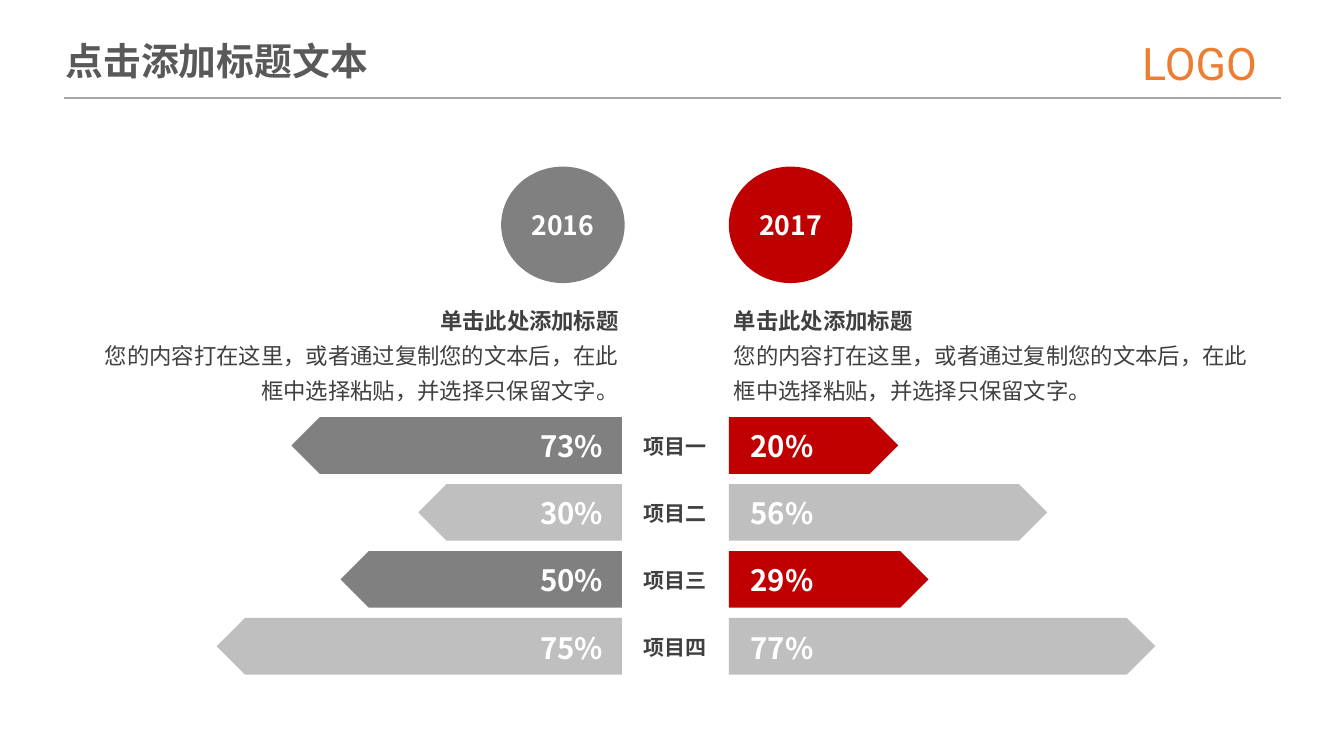
from dataclasses import dataclass

from lxml import etree
from pptx import Presentation
from pptx.dml.color import RGBColor
from pptx.enum.shapes import MSO_CONNECTOR, MSO_SHAPE
from pptx.enum.text import MSO_ANCHOR, PP_ALIGN
from pptx.oxml.ns import qn
from pptx.util import Pt

LEFT, CENTER, RIGHT = PP_ALIGN.LEFT, PP_ALIGN.CENTER, PP_ALIGN.RIGHT
TOP, MIDDLE = MSO_ANCHOR.TOP, MSO_ANCHOR.MIDDLE
ARROW_BAR, OVAL = MSO_SHAPE.PENTAGON, MSO_SHAPE.OVAL
STRAIGHT = MSO_CONNECTOR.STRAIGHT

COLORS = {
    "title": "595959", "accent": "ED7D31", "rule": "A6A6A6", "text": "404040",
    "gray": "808080", "pale": "BFBFBF", "red": "C00000", "white": "FFFFFF",
}
CJK_FONT = "Noto Sans CJK SC"
HEADING = "单击此处添加标题"
BODY = "您的内容打在这里，或者通过复制您的文本后，在此框中选择粘贴，并选择只保留文字。"

BAR_TOP, BAR_HEIGHT, ROW_PITCH = 298, 40.4, 47.8
PERCENT_TOP, PERCENT_PITCH = 302, 48.1
ITEM_TOP = 306


@dataclass
class Bar:
    percent: str
    length: float


@dataclass
class YearSide:
    year: str
    color: str
    circle_left: float
    bar_edge: float
    points_left: bool
    percent_left: float
    copy_left: float
    copy_width: float
    align: PP_ALIGN
    bars: list[Bar]


ITEMS = ["项目一", "项目二", "项目三", "项目四"]
SIDES = [
    YearSide("2016", "gray", 358, 444.2, True, 377.8, 64, 381.6, RIGHT,
             [Bar("73%", 236), Bar("30%", 145.4), Bar("50%", 201), Bar("75%", 289.4)]),
    YearSide("2017", "red", 520.6, 520.6, False, 528, 520.6, 390.2, LEFT,
             [Bar("20%", 121), Bar("56%", 227.5), Bar("29%", 142.6), Bar("77%", 304.6)]),
]


def rgb(name: str) -> RGBColor:
    return RGBColor.from_string(COLORS[name])


def write_text(shape, *lines: str, size: float, color: str, font: str = CJK_FONT,
               bold: tuple = (True,), align=LEFT, anchor=TOP, wrap: bool = False,
               insets: tuple = (7.2, 3.6), spacing: float = 1.0) -> None:
    """Fill a shape with one paragraph per line; bold has one flag per line."""
    frame = shape.text_frame
    frame.word_wrap = wrap
    frame.vertical_anchor = anchor
    frame.margin_left = frame.margin_right = Pt(insets[0])
    frame.margin_top = frame.margin_bottom = Pt(insets[1])
    frame.text = "\n".join(lines)
    for paragraph, is_bold in zip(frame.paragraphs, bold):
        paragraph.alignment = align
        paragraph.line_spacing = spacing
        run = paragraph.runs[0]
        run.font.size, run.font.bold, run.font.name = Pt(size), is_bold, font
        run.font.color.rgb = rgb(color)
        east_asian = etree.SubElement(run.font._element, qn("a:ea"))
        east_asian.set("typeface", font)


def add_text(slide, left: float, top: float, width: float, height: float,
             *lines: str, **text_format) -> None:
    box = slide.shapes.add_textbox(Pt(left), Pt(top), Pt(width), Pt(height))
    write_text(box, *lines, **text_format)


def add_filled(slide, kind, left: float, top: float, width: float, height: float,
               color: str):
    shape = slide.shapes.add_shape(kind, Pt(left), Pt(top), Pt(width), Pt(height))
    shape.shadow.inherit = False
    shape.fill.solid()
    shape.fill.fore_color.rgb = rgb(color)
    shape.line.fill.background()
    return shape


def add_header(slide) -> None:
    title = slide.shapes.title
    title.left, title.top, title.width, title.height = Pt(37.4), Pt(21.6), Pt(237.6), Pt(42.5)
    write_text(title, "点击添加标题文本", size=27, color="title", insets=(9.4, 5))
    add_text(slide, 806.4, 20.2, 119.5, 48.2, "LOGO", size=32, color="accent",
             font="Roboto", bold=(False,), insets=(9.4, 5))
    rule = slide.shapes.add_connector(STRAIGHT, Pt(45.7), Pt(70), Pt(915.1), Pt(70))
    rule.line.color.rgb = rgb("rule")
    rule.line.width = Pt(1)
    etree.SubElement(rule._element.spPr, qn("a:effectLst"))


def add_side(slide, side: YearSide) -> None:
    # Year circle
    circle = add_filled(slide, OVAL, side.circle_left, 119, 88.2, 83.2, side.color)
    write_text(circle, side.year, size=19, color="white", align=CENTER, anchor=MIDDLE)

    # Heading and description
    add_text(slide, side.copy_left, 212.4, side.copy_width, 79.2, HEADING, BODY,
             size=16, color="text", bold=(True, False), align=side.align,
             wrap=True, insets=(3.6, 1.6), spacing=1.3)

    # Bars with alternating colours
    for row, bar in enumerate(side.bars):
        left = side.bar_edge - bar.length if side.points_left else side.bar_edge
        arrow = add_filled(slide, ARROW_BAR, left, BAR_TOP + row * ROW_PITCH, bar.length,
                           BAR_HEIGHT, "pale" if row % 2 else side.color)
        arrow.rotation = 180 if side.points_left else 0
        add_text(slide, side.percent_left, PERCENT_TOP + row * PERCENT_PITCH, 61.2, 33.1,
                 bar.percent, size=21, color="white", align=CENTER)


def main() -> None:
    deck = Presentation()
    deck.slide_width, deck.slide_height = Pt(960), Pt(540)
    slide = deck.slides.add_slide(deck.slide_layouts[5])
    add_header(slide)
    for side in SIDES:
        add_side(slide, side)

    # Item names between the two sides
    for row, item in enumerate(ITEMS):
        add_text(slide, 452.5, ITEM_TOP + row * ROW_PITCH, 59.8, 25.2, item,
                 size=15, color="text", align=CENTER)
    deck.save("out.pptx")


if __name__ == "__main__":
    main()
